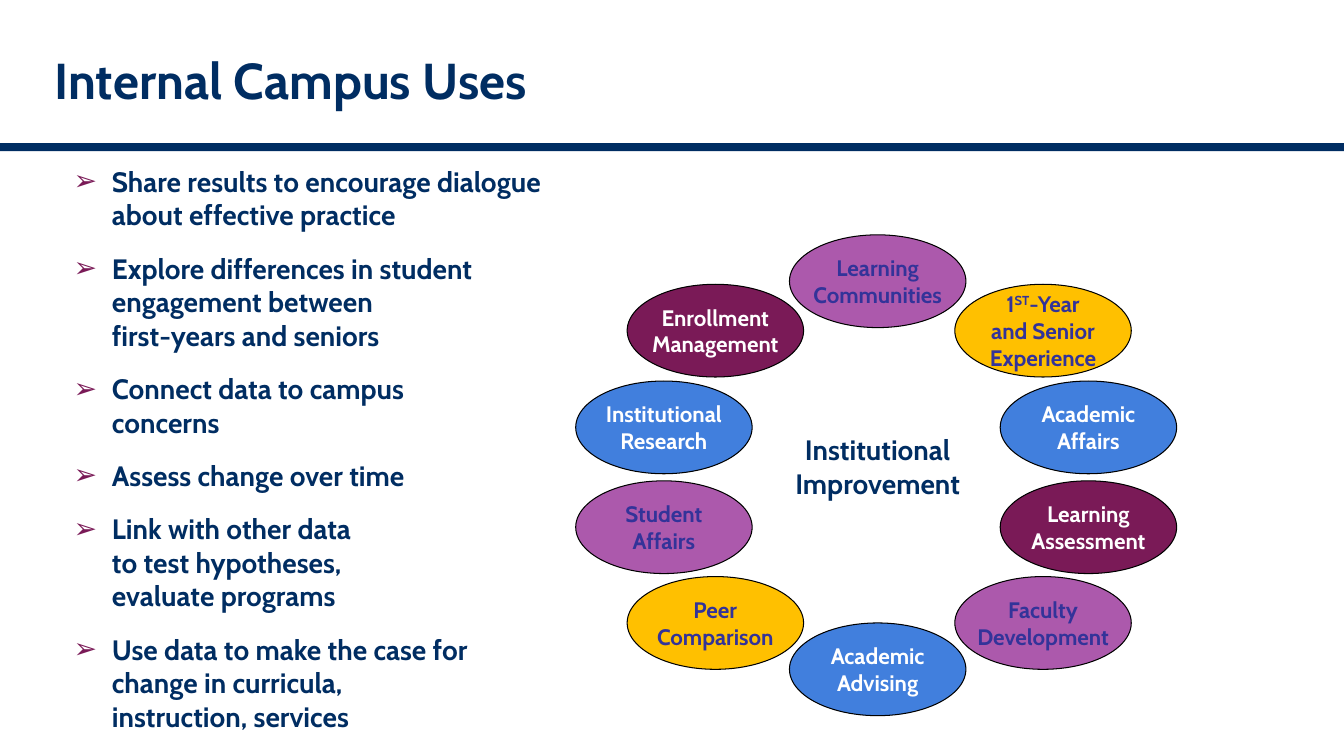
import pptx
import pptx.dml.color
import pptx.enum.shapes
import pptx.enum.text
import pptx.oxml
import pptx.oxml.ns
import pptx.util
from lxml import etree

Inches = pptx.util.Inches
Pt = pptx.util.Pt
RGBColor = pptx.dml.color.RGBColor
Shape = pptx.enum.shapes.MSO_SHAPE
Align = pptx.enum.text.PP_ALIGN
Anchor = pptx.enum.text.MSO_ANCHOR
qn = pptx.oxml.ns.qn

NAVY = RGBColor(0x00, 0x2D, 0x62)
MAROON = RGBColor(0x7A, 0x1A, 0x57)
PURPLE = RGBColor(0x80, 0x00, 0x80)
GOLD = RGBColor(0xFF, 0xC0, 0x00)
BLUE = RGBColor(0x41, 0x7F, 0xDD)
INDIGO = RGBColor(0x33, 0x33, 0x99)
WHITE = RGBColor(0xFF, 0xFF, 0xFF)
BLACK = RGBColor(0x00, 0x00, 0x00)

# Label colour and opacity (percent) that go with each oval fill
OVAL_STYLES = {PURPLE: (INDIGO, 65), GOLD: (INDIGO, 100),
               BLUE: (WHITE, 100), MAROON: (WHITE, 100)}
OVAL_WIDTH, OVAL_HEIGHT = 1.75, 0.92

USES = [
    "Share results to encourage dialogue about effective practice",
    "Explore differences in student\nengagement between\nfirst-years and seniors",
    "Connect data to campus\nconcerns",
    "Assess change over time",
    "Link with other data\nto test hypotheses,\nevaluate programs",
    "Use data to make the case for\nchange in curricula,\ninstruction, services",
]

# Runs (a leading ^ marks superscript), left, top, fill, label width, label height
UNITS = [
    (["Learning\nCommunities"], 7.83, 2.33, PURPLE, 1.75, 0.64),
    (["1", "^ST", "-Year\nand Senior\nExperience"], 9.47, 2.82, GOLD, 1.53, 0.9),
    (["Academic\nAffairs"], 9.92, 3.78, BLUE, 1.28, 0.64),
    (["Learning\nAssessment"], 9.92, 4.77, MAROON, 1.52, 0.64),
    (["Faculty\nDevelopment"], 9.47, 5.72, PURPLE, 1.69, 0.64),
    (["Academic\nAdvising"], 7.83, 6.18, BLUE, 1.28, 0.64),
    (["Peer\nComparison"], 6.22, 5.72, GOLD, 1.53, 0.64),
    (["Student\nAffairs"], 5.71, 4.77, PURPLE, 1.08, 0.64),
    (["Institutional\nResearch"], 5.71, 3.78, BLUE, 1.6, 0.64),
    (["Enrollment\nManagement"], 6.22, 2.82, MAROON, 1.66, 0.64),
]


class SlideBuilder:
    font_name = "Cabin"

    def __init__(self, slide):
        self.slide = slide

    def place(self, item, left, top, width, height):
        item.left, item.top = Inches(left), Inches(top)
        item.width, item.height = Inches(width), Inches(height)

    def add_runs(self, paragraph, text, size, color, superscript=False):
        for number, line in enumerate(text.split("\n")):
            if number:
                paragraph.add_line_break()
            run = paragraph.add_run()
            run.text = line
            run.font.name = self.font_name
            run.font.size = Pt(size)
            run.font.bold = True
            run.font.color.rgb = color
            if superscript:
                run.font._element.set("baseline", "30000")

    def title(self, text, *box):
        heading = self.slide.shapes.title
        self.place(heading, *box)
        heading.text_frame.vertical_anchor = Anchor.MIDDLE
        paragraph = heading.text_frame.paragraphs[0]
        paragraph.alignment = Align.LEFT
        self.add_runs(paragraph, text, 36, NAVY)

    def bullets(self, items, *box):
        body = self.slide.placeholders[1]
        self.place(body, *box)
        frame = body.text_frame
        frame.auto_size = pptx.enum.text.MSO_AUTO_SIZE.NONE
        for number, item in enumerate(items):
            paragraph = frame.add_paragraph() if number else frame.paragraphs[0]
            properties = paragraph._p.get_or_add_pPr()
            properties.set("marL", str(Inches(0.38)))
            properties.set("indent", str(-Inches(0.38)))
            bullet_color = etree.SubElement(properties, qn("a:buClr"))
            etree.SubElement(bullet_color, qn("a:srgbClr"), val=str(MAROON))
            etree.SubElement(properties, qn("a:buChar"), char="➢")
            paragraph.space_before = Pt(4 if number else 0)
            paragraph.space_after = Pt(10)
            self.add_runs(paragraph, item, 20, NAVY)

    def bar(self, color, *box):
        rule = self.slide.shapes.add_shape(Shape.RECTANGLE, *map(Inches, box))
        rule.shadow.inherit = False
        rule.fill.solid()
        rule.fill.fore_color.rgb = color
        rule.line.fill.background()

    def oval(self, shapes, color, opacity, *box):
        ellipse = shapes.add_shape(Shape.OVAL, *map(Inches, box))
        ellipse.shadow.inherit = False
        ellipse.fill.solid()
        ellipse.fill.fore_color.rgb = color
        if opacity < 100:
            fill_color = ellipse._element.spPr.find(qn("a:solidFill"))[0]
            etree.SubElement(fill_color, qn("a:alpha"), val=str(opacity * 1000))
        ellipse.line.color.rgb = BLACK
        ellipse.line.width = Pt(0.75)

    def label(self, shapes, paragraphs, size, color, *box):
        frame = shapes.add_textbox(*map(Inches, box)).text_frame
        frame.word_wrap = False
        frame.vertical_anchor = Anchor.MIDDLE
        for number, runs in enumerate(paragraphs):
            paragraph = frame.add_paragraph() if number else frame.paragraphs[0]
            paragraph.alignment = Align.CENTER
            for text in runs:
                self.add_runs(paragraph, text.lstrip("^"), size, color,
                              superscript=text.startswith("^"))


def main():
    deck = pptx.Presentation()
    deck.slide_width, deck.slide_height = Inches(13.33), Inches(7.5)
    builder = SlideBuilder(deck.slides.add_slide(deck.slide_layouts[1]))

    # Heading and list of uses
    builder.bar(NAVY, 0, 1.42, 13.33, 0.08)
    builder.title("Internal Campus Uses", 0.44, 0.25, 12.44, 1.08)
    builder.bullets(USES, 0.63, 1.58, 5.6, 5.67)

    # Ring of campus units, each label centred on its oval
    ring = builder.slide.shapes.add_group_shape().shapes
    for runs, left, top, fill, width, height in UNITS:
        label_color, opacity = OVAL_STYLES[fill]
        builder.oval(ring, fill, opacity, left, top, OVAL_WIDTH, OVAL_HEIGHT)
        builder.label(ring, [runs], 16, label_color,
                      left + (OVAL_WIDTH - width) / 2,
                      top + (OVAL_HEIGHT - height) / 2, width, height)

    # Centre of the ring
    builder.label(ring, [["Institutional"], ["Improvement"]], 20, NAVY,
                  7.62, 4.25, 2.17, 0.75)

    deck.save("out.pptx")


if __name__ == "__main__":
    main()
